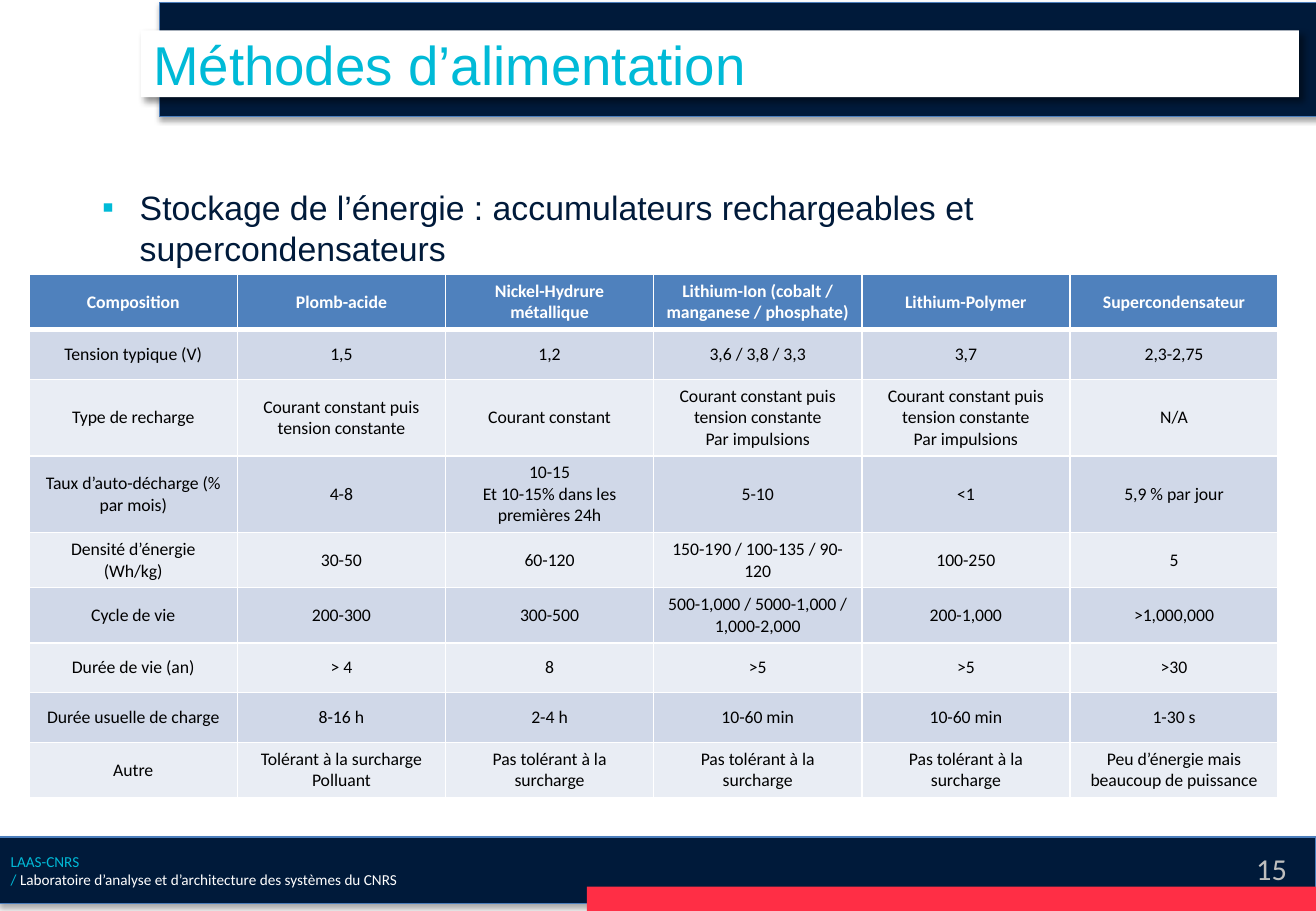
"""Build the slide comparing rechargeable batteries and supercapacitors."""
from lxml import etree
from pptx import Presentation
from pptx.dml.color import RGBColor
from pptx.enum.shapes import MSO_SHAPE
from pptx.enum.text import MSO_ANCHOR, MSO_AUTO_SIZE, PP_ALIGN
from pptx.oxml import parse_xml
from pptx.oxml.ns import nsdecls, qn
from pptx.util import Inches, Pt

RECTANGLE = MSO_SHAPE.RECTANGLE
MIDDLE, TOP = MSO_ANCHOR.MIDDLE, MSO_ANCHOR.TOP
LEFT, CENTER, RIGHT = PP_ALIGN.LEFT, PP_ALIGN.CENTER, PP_ALIGN.RIGHT
NO_FIT = MSO_AUTO_SIZE.NONE
NAVY, CYAN, RED, WHITE = "001A3A", "00BAD7", "FF2E45", "FFFFFF"
HEADER, BANDS = "4F81BD", ("E9EDF4", "D0D8E8")
WIDTH, HEIGHT = 10.83, 7.5
MARGIN, CONTENT_WIDTH = 0.24, 10.28
ROW_HEIGHT = 0.41

ROWS = [
    ["Composition", "Plomb-acide", "Nickel-Hydrure métallique",
     "Lithium-Ion (cobalt / manganese / phosphate)", "Lithium-Polymer", "Supercondensateur"],
    ["Tension typique (V)", "1,5", "1,2", "3,6 / 3,8 / 3,3", "3,7", "2,3-2,75"],
    ["Type de recharge", "Courant constant puis tension constante", "Courant constant",
     "Courant constant puis tension constante\nPar impulsions",
     "Courant constant puis tension constante\nPar impulsions", "N/A"],
    ["Taux d’auto-décharge (% par mois)", "4-8",
     "10-15\nEt 10-15% dans les premières 24h", "5-10", "<1", "5,9 % par jour"],
    ["Densité d’énergie (Wh/kg)", "30-50", "60-120", "150-190 / 100-135 / 90-120",
     "100-250", "5"],
    ["Cycle de vie", "200-300", "300-500", "500-1,000 / 5000-1,000 / 1,000-2,000",
     "200-1,000", ">1,000,000"],
    ["Durée de vie (an)", "> 4", "8", ">5", ">5", ">30"],
    ["Durée usuelle de charge", "8-16 h", "2-4 h", "10-60 min", "10-60 min", "1-30 s"],
    ["Autre", "Tolérant à la surcharge\nPolluant", "Pas tolérant à la surcharge",
     "Pas tolérant à la surcharge", "Pas tolérant à la surcharge",
     "Peu d’énergie mais beaucoup de puissance"],
]


def color(value):
    return RGBColor.from_string(value)


def write(para, text, size, tint, font="Calibri", bold=False):
    span = para.add_run()
    span.text = text
    span.font.size, span.font.name, span.font.bold = Pt(size), font, bold
    span.font.color.rgb = color(tint)


deck = Presentation()
deck.slide_width, deck.slide_height = Inches(WIDTH), Inches(HEIGHT)
page = deck.slides.add_slide(deck.slide_layouts[1])
title, body = page.shapes.title, page.placeholders[1]

bars = []
for left, top, width, height, fill, line in [
    (1.31, 0.02, 9.61, 0.94, NAVY, "4B7EBC"),
    (-0.01, 6.89, 10.84, 0.55, NAVY, "4B7EBC"),
    (4.83, 7.3, 6.07, 0.2, RED, None),
]:
    bar = page.shapes.add_shape(RECTANGLE, *map(Inches, (left, top, width, height)))
    bar.shadow.inherit = False
    bar.fill.solid()
    bar.fill.fore_color.rgb = color(fill)
    if line:
        bar.line.color.rgb = color(line)
        bar.line.width = Pt(0.75)
    else:
        bar.line.fill.background()
    bars.append(bar)
banner, footer, accent = bars

footer.text_frame.vertical_anchor = MIDDLE
para = footer.text_frame.paragraphs[0]
para.alignment = LEFT
write(para, "LAAS-CNRS", 9, CYAN)
para.add_line_break()
write(para, "/", 9, CYAN)
write(para, " Laboratoire d’analyse et d’architecture des systèmes du CNRS", 9, WHITE)

number = page.shapes.add_textbox(*map(Inches, (8.16, 6.95, 2.53, 0.4)))
number.text_frame.word_wrap = True
para = number.text_frame.paragraphs[0]
para.alignment = RIGHT
write(para, "15", 18, "BFBFBF")

for box, (left, top, width, height), anchor in [
    (body, (MARGIN, 1.49, CONTENT_WIDTH, 4.95), TOP),
    (title, (1.16, 0.25, 9.53, 0.55), MIDDLE),
]:
    box.left, box.top, box.width, box.height = map(Inches, (left, top, width, height))
    box.text_frame.auto_size = NO_FIT
    box.text_frame.word_wrap = True
    box.text_frame.vertical_anchor = anchor
    page.shapes._spTree.append(box._element)

para = body.text_frame.paragraphs[0]
para.level = 1
para.space_before = Pt(0)
settings = para._p.get_or_add_pPr()
settings.set("marL", str(Inches(0.81)))
settings.set("indent", str(Inches(-0.31)))
bullet_color = etree.SubElement(settings, qn("a:buClr"))
etree.SubElement(bullet_color, qn("a:srgbClr"), val=CYAN)
etree.SubElement(settings, qn("a:buFont"), typeface="Arial")
etree.SubElement(settings, qn("a:buChar"), char="▪")
write(para, "Stockage de l’énergie : accumulateurs rechargeables et supercondensateurs",
      20, NAVY, "Arial")

title.fill.solid()
title.fill.fore_color.rgb = color(WHITE)
title.text_frame.margin_top = title.text_frame.margin_bottom = 0
para = title.text_frame.paragraphs[0]
para.alignment = LEFT
write(para, "Méthodes d’alimentation", 32.4, CYAN, "Arial")

for box, opacity, blur, distance, angle in [
    (banner, 35, 3.1, 1.8, 90), (footer, 35, 3.1, 1.8, 90), (title, 43, 4, 3, 45),
]:
    box.shadow.inherit = False
    effects = box._element.spPr.find(qn("a:effectLst"))
    effects.append(parse_xml(
        f'<a:outerShdw {nsdecls("a")} blurRad="{Pt(blur)}" dist="{Pt(distance)}" '
        f'dir="{angle * 60000}" rotWithShape="0"><a:srgbClr val="000000">'
        f'<a:alpha val="{opacity * 1000}"/></a:srgbClr></a:outerShdw>'))

table = page.shapes.add_table(
    len(ROWS), len(ROWS[0]), Inches(MARGIN), Inches(2.26),
    Inches(CONTENT_WIDTH), Inches(ROW_HEIGHT * len(ROWS))).table
table.horz_banding = False
for row_index, texts in enumerate(ROWS):
    is_header = row_index == 0
    for column_index, text in enumerate(texts):
        cell = table.cell(row_index, column_index)
        cell.vertical_anchor = MIDDLE
        cell.fill.solid()
        cell.fill.fore_color.rgb = color(HEADER if is_header else BANDS[row_index % 2])
        for line_index, line in enumerate(text.split("\n")):
            frame = cell.text_frame
            para = frame.add_paragraph() if line_index else frame.paragraphs[0]
            para.alignment = CENTER
            write(para, line, 10.5, WHITE if is_header else "000000", bold=is_header)
        weights = {"L": 1, "R": 1, "T": 3 if row_index == 1 else 1, "B": 3 if is_header else 1}
        for order, (side, weight) in enumerate(weights.items()):
            cell._tc.get_or_add_tcPr().insert(order, parse_xml(
                f'<a:ln{side} {nsdecls("a")} w="{Pt(weight)}"><a:solidFill>'
                f'<a:srgbClr val="{WHITE}"/></a:solidFill></a:ln{side}>'))

deck.save("out.pptx")
